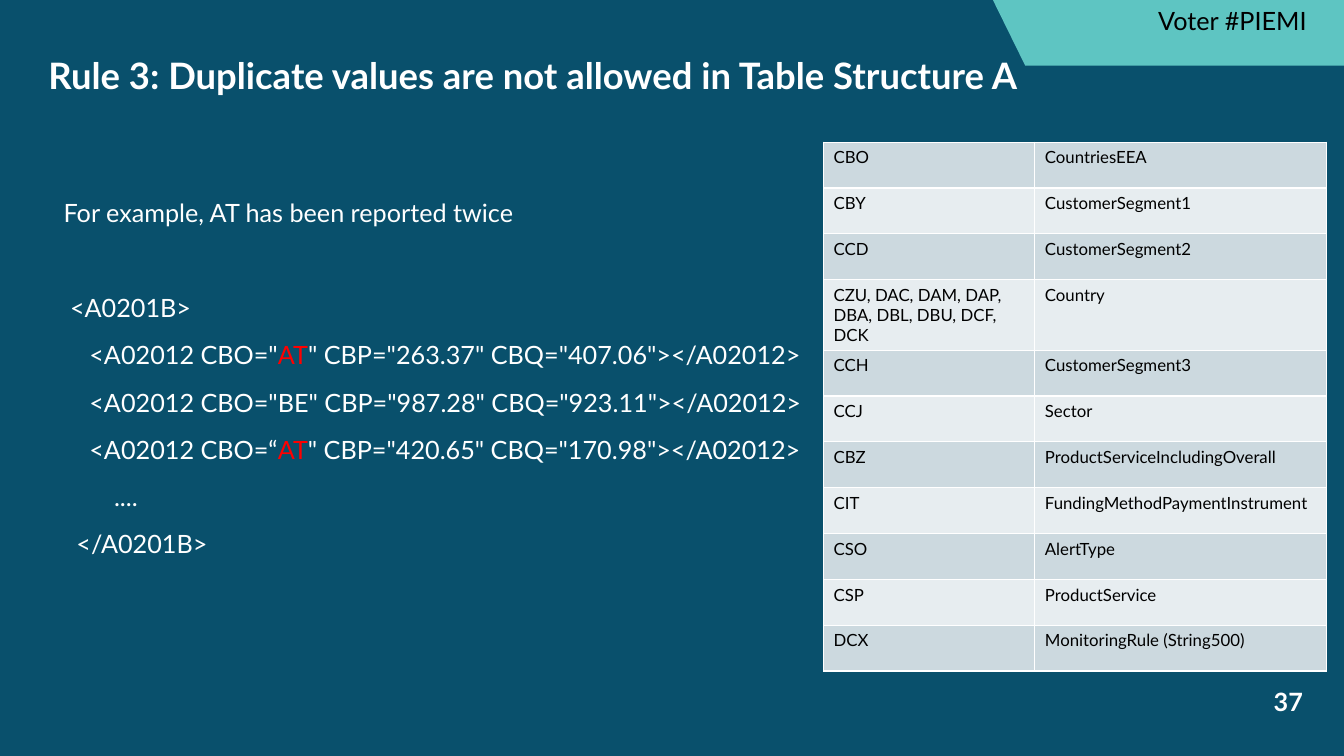
import pptx
import pptx.dml.color
import pptx.enum.text
import pptx.util
from dataclasses import dataclass
from pptx.oxml import parse_xml
from pptx.oxml.ns import nsdecls

Pt, Inches, RGB = pptx.util.Pt, pptx.util.Inches, pptx.dml.color.RGBColor.from_string
ANCHOR, ALIGN = pptx.enum.text.MSO_ANCHOR, pptx.enum.text.PP_ALIGN
NO_FIT = pptx.enum.text.MSO_AUTO_SIZE.NONE


@dataclass(frozen=True)
class Theme:
    font: str = "Lato"
    background: str = "09506C"
    accent: str = "5EC5C2"
    light: str = "FFFFFF"
    dark: str = "000000"
    alert: str = "FF0000"
    bands: tuple = ("CCD9DF", "E7EDF0")
    title: int = 26
    text: int = 18
    cell: int = 12


THEME = Theme()
SLIDE_W, SLIDE_H = Inches(13.33), Inches(7.5)
LINE_SPACING, SPACE_BEFORE, BLOCK_GAP = 1.1, 10, 44

TITLE = "Rule 3: Duplicate values are not allowed in Table Structure A"
SESSION_TAG = "Voter #PIEMI"
PAGE = "37"
INTRO = "For example, AT has been reported twice"
# Each code line is a list of pieces; the repeated key is its own piece.
REPEATED = "AT"
CODE = [
    [" <A0201B>"],
    ['    <A02012 CBO="', REPEATED, '" CBP="263.37" CBQ="407.06"></A02012>'],
    ['    <A02012 CBO="BE" CBP="987.28" CBQ="923.11"></A02012>'],
    ['    <A02012 CBO=“', REPEATED, '" CBP="420.65" CBQ="170.98"></A02012>'],
    ["\t...."],
    ["  </A0201B>"],
]
FIELDS = [
    ("CBO", "CountriesEEA"),
    ("CBY", "CustomerSegment1"),
    ("CCD", "CustomerSegment2"),
    ("CZU, DAC, DAM, DAP, DBA, DBL, DBU, DCF, DCK", "Country"),
    ("CCH", "CustomerSegment3"),
    ("CCJ", "Sector"),
    ("CBZ", "ProductServiceIncludingOverall"),
    ("CIT", "FundingMethodPaymentInstrument"),
    ("CSO", "AlertType"),
    ("CSP", "ProductService"),
    ("DCX", "MonitoringRule (String500)"),
]
TALL_ROW, TALL_SHARE, KEY_SHARE = 3, 0.13, 0.42


def area(x, y, w, h):
    """Box in EMU from percentages of the slide's width and height."""
    return (int(SLIDE_W * x / 100), int(SLIDE_H * y / 100),
            int(SLIDE_W * w / 100), int(SLIDE_H * h / 100))


def assign(obj, values):
    for name, value in values.items():
        setattr(obj, name, value)


def add_run(p, text, size=THEME.text, color=THEME.light, bold=False):
    r = p.add_run()
    r.text = text
    assign(r.font, {"name": THEME.font, "size": Pt(size), "bold": bold})
    r.font.color.rgb = RGB(color)


def place(sp, box):
    assign(sp, dict(zip(("left", "top", "width", "height"), box)))


def add_label(s, box, text, color, align=ALIGN.LEFT, anchor=ANCHOR.TOP, bold=False):
    tf = s.shapes.add_textbox(*box).text_frame
    assign(tf, {"word_wrap": True, "vertical_anchor": anchor})
    p = tf.paragraphs[0]
    p.alignment = align
    add_run(p, text, color=color, bold=bold)


def add_corner_tab(s, box):
    x, y, w, h = box
    outline = s.shapes.build_freeform(x, y, scale=1.0)
    outline.add_line_segments(
        [(x + w, y), (x + w, y + h), (x + int(w * 0.092), y + h)], close=True)
    sp = outline.convert_to_shape()
    sp.shadow.inherit = False
    sp.fill.solid()
    sp.fill.fore_color.rgb = RGB(THEME.accent)
    sp.line.fill.background()
    tag_x = int(w * 0.4425)
    add_label(s, (x + tag_x, y, w - tag_x, int(h * 0.615)), SESSION_TAG, THEME.dark)


def fill_title(s, box):
    sp = s.shapes.title
    place(sp, box)
    tf = sp.text_frame
    assign(tf, {"vertical_anchor": ANCHOR.MIDDLE, "word_wrap": True, "auto_size": NO_FIT})
    p = tf.paragraphs[0]
    assign(p, {"alignment": ALIGN.LEFT, "line_spacing": 0.9})
    add_run(p, TITLE, THEME.title, bold=True)


def fill_example(s, box):
    sp = s.placeholders[1]
    place(sp, box)
    tf = sp.text_frame
    assign(tf, {"word_wrap": True, "auto_size": NO_FIT})
    for i, pieces in enumerate([[INTRO]] + CODE):
        p = tf.paragraphs[0] if i == 0 else tf.add_paragraph()
        before = {0: 0, 1: BLOCK_GAP}.get(i, SPACE_BEFORE)
        assign(p, {"line_spacing": LINE_SPACING, "space_before": Pt(before)})
        pPr = p._p.get_or_add_pPr()
        pPr.set("marL", "0")
        pPr.set("indent", "0")
        pPr.append(parse_xml(f"<a:buNone {nsdecls('a')}/>"))
        pPr.append(parse_xml(
            f'<a:tabLst {nsdecls("a")}><a:tab pos="{Inches(1)}" algn="l"/></a:tabLst>'))
        for piece in pieces:
            add_run(p, piece, color=THEME.alert if piece == REPEATED else THEME.light)


def format_cell(cell, text, band):
    tcPr = cell._tc.get_or_add_tcPr()
    for side in "LRTB":
        tcPr.append(parse_xml(
            f'<a:ln{side} {nsdecls("a")} w="{Pt(1)}"><a:solidFill>'
            f'<a:srgbClr val="{THEME.light}"/></a:solidFill></a:ln{side}>'))
    cell.fill.solid()
    cell.fill.fore_color.rgb = RGB(band)
    add_run(cell.text_frame.paragraphs[0], text, THEME.cell, THEME.dark)


def add_field_table(s, box):
    w, h = box[2:]
    table = s.shapes.add_table(len(FIELDS), 2, *box).table
    assign(table, {"first_row": False, "horz_banding": False})
    for column, share in zip(table.columns, (KEY_SHARE, 1 - KEY_SHARE)):
        column.width = int(w * share)
    row_share = (1 - TALL_SHARE) / (len(FIELDS) - 1)
    for i, values in enumerate(FIELDS):
        table.rows[i].height = int(h * (TALL_SHARE if i == TALL_ROW else row_share))
        for j, text in enumerate(values):
            format_cell(table.cell(i, j), text, THEME.bands[i % 2])


def build_rule_slide(prs):
    s = prs.slides.add_slide(prs.slide_layouts[1])
    s.background.fill.solid()
    s.background.fill.fore_color.rgb = RGB(THEME.background)
    add_corner_tab(s, area(73.88, 0, 26.12, 8.67))
    add_label(s, area(89.8, 90.13, 7.88, 5.33), PAGE, THEME.light,
              ALIGN.RIGHT, ANCHOR.MIDDLE, bold=True)
    fill_title(s, area(2.85, 7.6, 93.4, 5.47))
    fill_example(s, area(3.98, 25.07, 88.6, 59.47))
    add_field_table(s, area(61.28, 18.8, 37.43, 69.73))


def main():
    prs = pptx.Presentation()
    assign(prs, {"slide_width": SLIDE_W, "slide_height": SLIDE_H})
    build_rule_slide(prs)
    prs.save("out.pptx")


if __name__ == "__main__":
    main()
